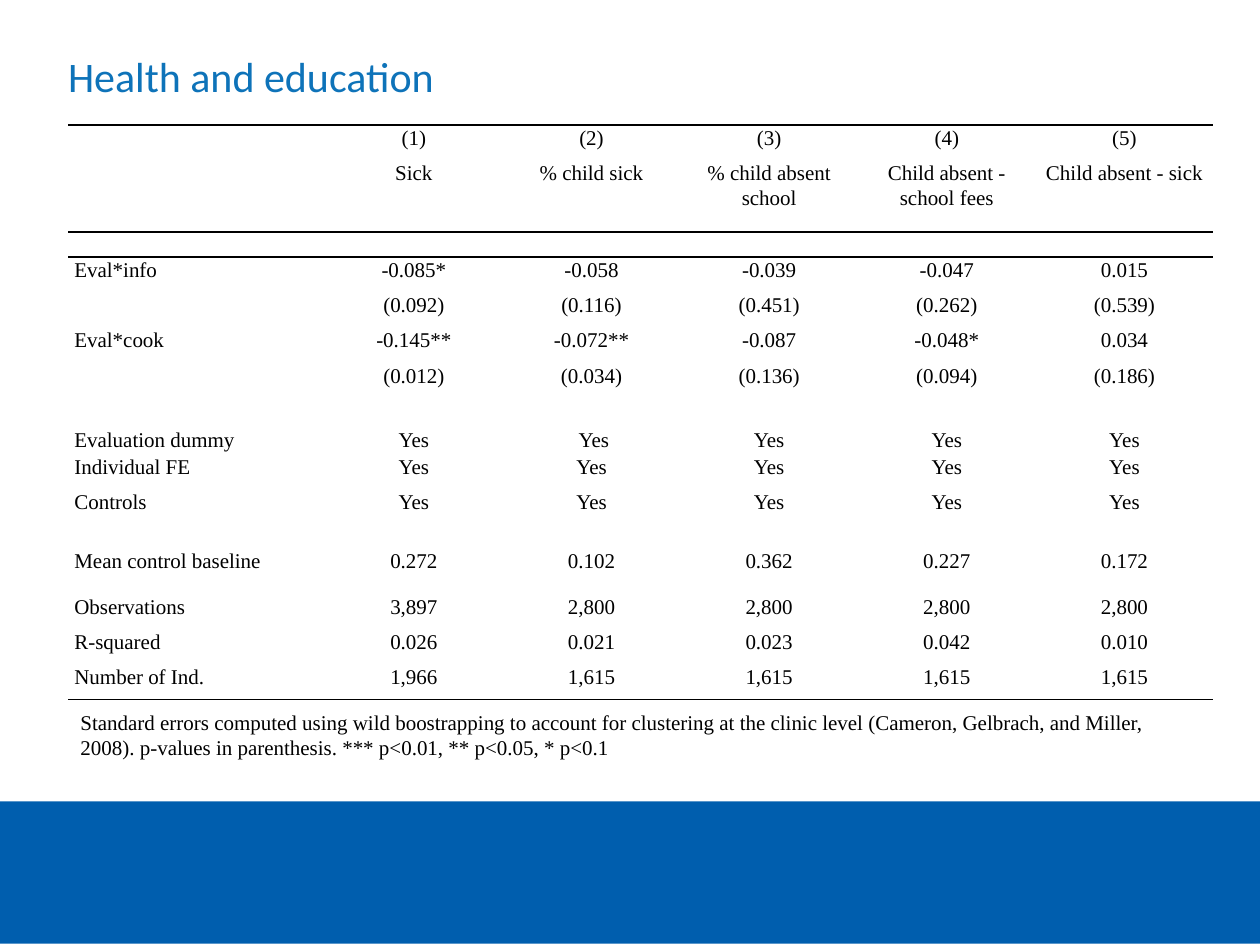
from lxml import etree
from pptx import Presentation
from pptx import util as u
from pptx.dml.color import RGBColor
from pptx.enum import shapes, text
from pptx.oxml import ns

BLUE = RGBColor(0x00, 0x5E, 0xAE)
TITLE_BLUE = RGBColor(0x0E, 0x73, 0xB9)
BLACK = RGBColor(0, 0, 0)
SERIF = "Times New Roman"
NO_STYLE = "{2D5ABB26-0587-4C30-8999-92F81FD0307C}"

LEFT, WIDTH = u.Inches(0.54), u.Inches(9.09)
LABEL_WIDTH, VALUE_WIDTH = u.Inches(2.04), u.Inches(1.41)
TABLE_TOP, LINE_ROW = 0.99, 0.28

# Each row: height in inches, label, values
YES = ["Yes"] * 5
ROWS = [
    (LINE_ROW, "", ["(1)", "(2)", "(3)", "(4)", "(5)"]),
    (0.57, "", ["Sick", "% child sick", "% child absent school",
                "Child absent - school fees", "Child absent - sick"]),
    (0.2, "", [""] * 5),
    (LINE_ROW, "Eval*info", ["-0.085*", "-0.058", "-0.039", "-0.047", "0.015"]),
    (LINE_ROW, "", ["(0.092)", "(0.116)", "(0.451)", "(0.262)", "(0.539)"]),
    (LINE_ROW, "Eval*cook", ["-0.145**", "-0.072**", "-0.087", "-0.048*", "0.034"]),
    (LINE_ROW, "", ["(0.012)", "(0.034)", "(0.136)", "(0.094)", "(0.186)"]),
    (0.23, "", [""] * 5),
    (0.2, "Evaluation dummy", ["Yes", " Yes", "Yes", "Yes", "Yes"]),
    (LINE_ROW, "Individual FE", YES),
    (LINE_ROW, "Controls", YES),
    (0.19, "", [""] * 5),
    (0.36, "Mean control baseline", ["0.272", "0.102", "0.362", "0.227", "0.172"]),
    (LINE_ROW, "Observations", ["3,897"] + ["2,800"] * 4),
    (LINE_ROW, "R-squared", ["0.026", "0.021", "0.023", "0.042", "0.010"]),
    (LINE_ROW, "Number of Ind.", ["1,966"] + ["1,615"] * 4),
]
RULES = {0: "a:lnT", 1: "a:lnB", 2: "a:lnT", len(ROWS) - 1: "a:lnB"}


def add_rule(cell, side):
    """Draw a 1 pt black border on one side of a table cell."""
    line = etree.Element(ns.qn(side), w=str(u.Pt(1)))
    fill = etree.SubElement(line, ns.qn("a:solidFill"))
    etree.SubElement(fill, ns.qn("a:srgbClr"), val=str(BLACK))
    cell._tc.get_or_add_tcPr().insert(0, line)


def style_run(para, name, size, color):
    font = para.runs[0].font
    font.name, font.size, font.color.rgb = name, u.Pt(size), color


deck = Presentation()
deck.slide_width, deck.slide_height = u.Inches(10), u.Inches(7.5)
page = deck.slides.add_slide(deck.slide_layouts[6])

band = page.shapes.add_shape(shapes.MSO_SHAPE.RECTANGLE, 0, u.Inches(6.36),
                             deck.slide_width, u.Inches(1.13))
band.shadow.inherit = False
band.fill.solid()
band.fill.fore_color.rgb = BLUE
band.line.fill.background()

title = page.shapes.add_textbox(LEFT, u.Inches(0.19), u.Inches(8.2), u.Inches(0.61))
frame = title.text_frame
frame.word_wrap = True
frame.vertical_anchor = text.MSO_ANCHOR.BOTTOM
frame.margin_left = frame.margin_right = frame.margin_top = frame.margin_bottom = 0
frame.text = "Health and education"
style_run(frame.paragraphs[0], "Calibri", 24, TITLE_BLUE)

height = u.Inches(sum(row[0] for row in ROWS))
graphic = page.shapes.add_table(len(ROWS), 6, LEFT, u.Inches(TABLE_TOP), WIDTH, height)
table = graphic.table
table.first_row = table.horz_banding = False
table._tbl.tblPr.find(ns.qn("a:tableStyleId")).text = NO_STYLE
for index, column in enumerate(table.columns):
    column.width = VALUE_WIDTH if index else LABEL_WIDTH

for row_index, (row_height, label, values) in enumerate(ROWS):
    table.rows[row_index].height = u.Inches(row_height)
    for column_index, words in enumerate([label] + values):
        cell = table.cell(row_index, column_index)
        cell.margin_left = cell.margin_right = u.Inches(0.05)
        cell.margin_top = cell.margin_bottom = 0
        cell.fill.background()
        para = cell.text_frame.paragraphs[0]
        if words:
            para.text = words
            para.line_spacing = 1.07
            if column_index:
                para.alignment = text.PP_ALIGN.CENTER
            style_run(para, SERIF, 12, BLACK)
        else:
            # An empty cell keeps its row low only with a small text size
            etree.SubElement(para._p, ns.qn("a:endParaRPr"), sz="1000")
        if row_index in RULES:
            add_rule(cell, RULES[row_index])

note = page.shapes.add_textbox(LEFT, u.Inches(5.58), WIDTH, u.Inches(0.5))
note.text_frame.word_wrap = True
note.text_frame.auto_size = text.MSO_AUTO_SIZE.SHAPE_TO_FIT_TEXT
note.text_frame.text = (
    "Standard errors computed using wild boostrapping to account for clustering at the "
    "clinic level (Cameron, Gelbrach, and Miller, 2008). p-values in parenthesis. "
    "*** p<0.01, ** p<0.05, * p<0.1")
style_run(note.text_frame.paragraphs[0], SERIF, 12, BLACK)

deck.save("out.pptx")
